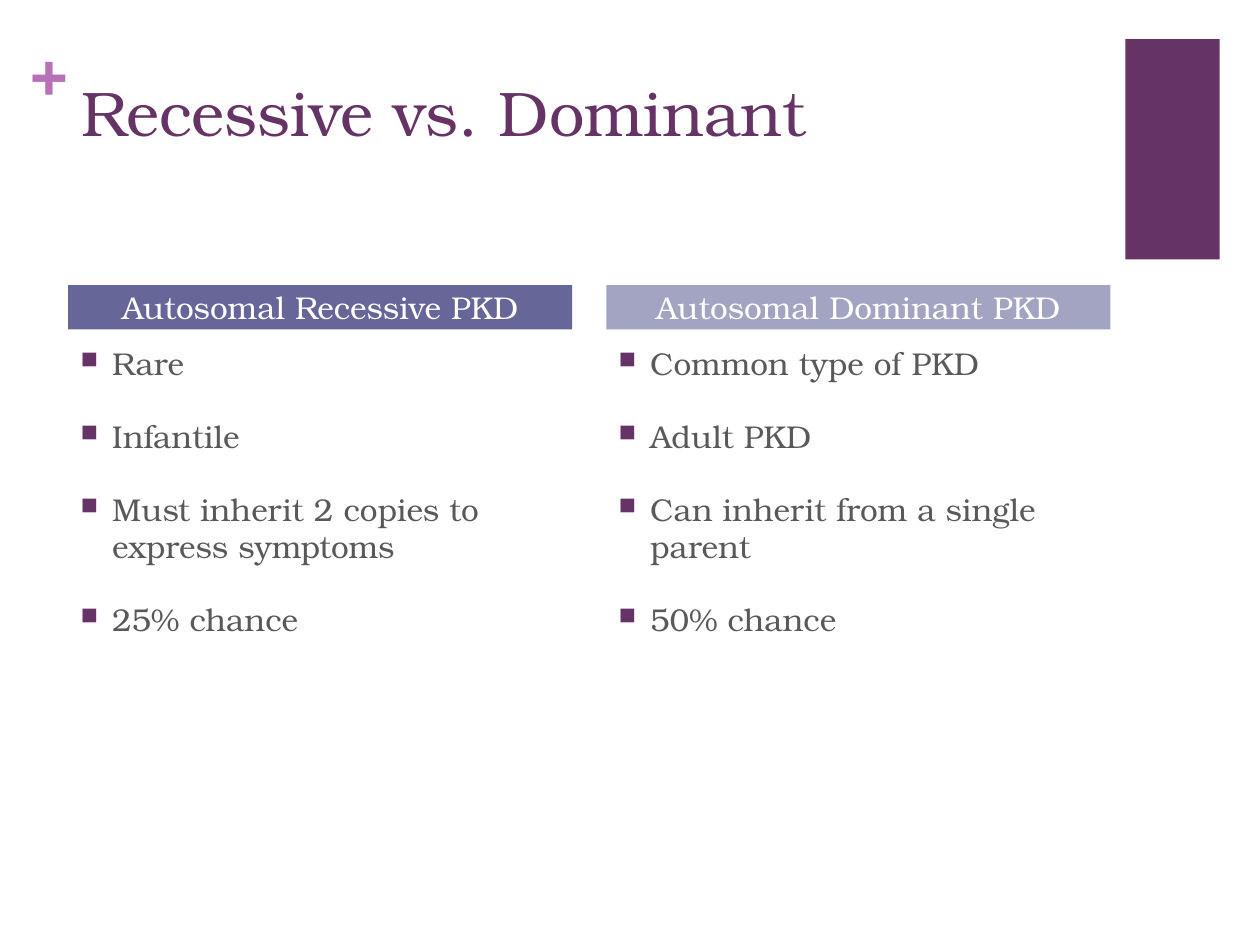
from lxml import etree
from pptx import Presentation
from pptx.dml.color import RGBColor
from pptx.enum.shapes import MSO_SHAPE
from pptx.enum.text import MSO_ANCHOR, PP_ALIGN
from pptx.oxml.ns import qn
from pptx.util import Pt

RECT = MSO_SHAPE.RECTANGLE
MIDDLE = MSO_ANCHOR.MIDDLE
CENTER = PP_ALIGN.CENTER

FONT = "TeX Gyre Bonum"
PLUM = RGBColor(0x66, 0x33, 0x66)
ORCHID = RGBColor(0xB8, 0x70, 0xB8)
INDIGO = RGBColor(0x66, 0x66, 0x99)
LAVENDER = RGBColor(0xA3, 0xA3, 0xC2)
GRAY = RGBColor(0x59, 0x59, 0x59)
WHITE = RGBColor(0xFF, 0xFF, 0xFF)

COLUMN_LEFT, COLUMN_STEP, COLUMN_WIDTH = 39, 307.5, 288
COLUMNS = [
    ("Autosomal Recessive PKD", INDIGO,
     ["Rare", "Infantile", "Must inherit 2 copies to express symptoms", "25% chance"]),
    ("Autosomal Dominant PKD", LAVENDER,
     ["Common type of PKD", "Adult PKD", "Can inherit from a single parent", "50% chance"]),
]


def write(p, text, size, color, bold=False):
    p.text = text
    p.font.name = FONT
    p.font.size = Pt(size)
    p.font.bold = bold
    p.font.color.rgb = color


def add_rect(left, top, width, height, color):
    sp = s.shapes.add_shape(RECT, Pt(left), Pt(top), Pt(width), Pt(height))
    sp.shadow.inherit = False
    sp.fill.solid()
    sp.fill.fore_color.rgb = color
    sp.line.fill.background()
    return sp


prs = Presentation()
prs.slide_width, prs.slide_height = Pt(720), Pt(540)
s = prs.slides.add_slide(prs.slide_layouts[6])

# Corner block, plus sign and title
add_rect(643, 22.3, 54, 126, PLUM)

tf = s.shapes.add_textbox(Pt(17.5), Pt(18), Pt(21), Pt(44)).text_frame
tf.margin_left = tf.margin_right = tf.margin_top = tf.margin_bottom = 0
write(tf.paragraphs[0], "+", 36, ORCHID, bold=True)

tf = s.shapes.add_textbox(Pt(39.6), Pt(38.2), Pt(595), Pt(88)).text_frame
tf.word_wrap = True
write(tf.paragraphs[0], "Recessive vs. Dominant", 36, PLUM)

# Two columns: heading bar above a bulleted list
for i, (heading, color, items) in enumerate(COLUMNS):
    left = COLUMN_LEFT + i * COLUMN_STEP

    tf = s.shapes.add_textbox(Pt(left), Pt(193), Pt(COLUMN_WIDTH), Pt(289.5)).text_frame
    tf.word_wrap = True
    for j, item in enumerate(items):
        p = tf.add_paragraph() if j else tf.paragraphs[0]
        write(p, item, 18, GRAY)
        p.space_before = Pt(20)
        pPr = p._p.get_or_add_pPr()
        pPr.set("marL", str(Pt(18)))
        pPr.set("indent", str(-Pt(18)))
        bullet = [etree.Element(qn("a:buClr")),
                  etree.Element(qn("a:buSzPct"), val="75000"),
                  etree.Element(qn("a:buChar"), char="■")]
        etree.SubElement(bullet[0], qn("a:srgbClr"), val=str(PLUM))
        pPr.find(qn("a:spcBef")).addnext(bullet[0])
        bullet[0].addnext(bullet[1])
        bullet[1].addnext(bullet[2])

    tf = add_rect(left, 163, COLUMN_WIDTH, 25.2, color).text_frame
    tf.word_wrap = True
    tf.vertical_anchor = MIDDLE
    tf.margin_top = tf.margin_bottom = 0
    p = tf.paragraphs[0]
    write(p, heading, 18, WHITE)
    p.alignment = CENTER

prs.save("out.pptx")
